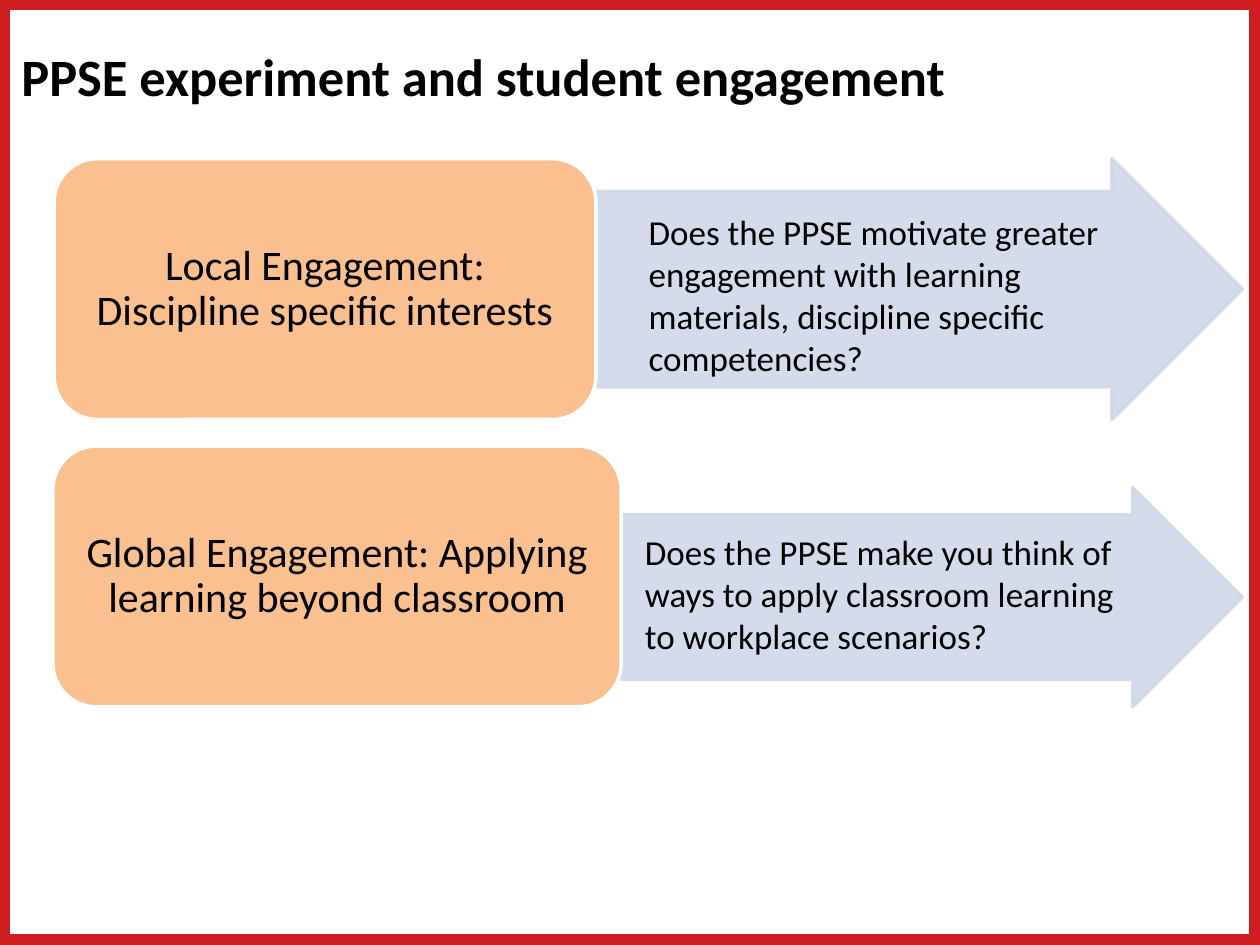
from lxml.etree import SubElement
from pptx import Presentation
from pptx.dml.color import RGBColor
from pptx.enum.shapes import MSO_SHAPE as Shape
from pptx.enum.text import MSO_ANCHOR as Anchor, PP_ALIGN as Align
from pptx.oxml.ns import qn
from pptx.util import Inches, Pt

COLORS = {"frame": "CF1C20", "arrow": "D0D8E8", "card": "FAC090",
          "outline": "FFFFFF", "text": "000000"}

prs = Presentation()
prs.slide_width, prs.slide_height = Inches(10), Inches(7.5)
COL, ROW = prs.slide_width / 100, prs.slide_height / 75
slide = prs.slides.add_slide(prs.slide_layouts[6])


def add_block(preset, area, fill, line, line_width, opacity=100):
    """Add a preset shape, or a text box if preset is None; area is in grid units."""
    left, top, width, height = area
    box = [round(v) for v in (left * COL, top * ROW, width * COL, height * ROW)]
    if preset is None:
        return slide.shapes.add_textbox(*box)
    block = slide.shapes.add_shape(preset, *box)
    block.shadow.inherit = False
    block.line.color.rgb = RGBColor.from_string(COLORS[line])
    block.line.width = Pt(line_width)
    if fill:
        block.fill.solid()
        block.fill.fore_color.rgb = RGBColor.from_string(COLORS[fill])
    else:
        block.fill.background()
    if opacity < 100:
        for color in block._element.spPr.iter(qn("a:srgbClr")):
            SubElement(color, qn("a:alpha"), val=str(opacity * 1000))
    return block


def write(block, text, size, inset=(0.1, 0.05), bold=False,
          align=Align.LEFT, anchor=Anchor.TOP, spacing=1.0):
    frame = block.text_frame
    side, end = map(Inches, inset)
    layout = {"word_wrap": True, "vertical_anchor": anchor,
              "margin_left": side, "margin_right": side,
              "margin_top": end, "margin_bottom": end}
    for name, value in layout.items():
        setattr(frame, name, value)
    paragraph = frame.paragraphs[0]
    paragraph.alignment, paragraph.line_spacing = align, spacing
    run = paragraph.add_run()
    run.text = text
    for name, value in {"name": "Calibri", "size": Pt(size), "bold": bold}.items():
        setattr(run.font, name, value)
    run.font.color.rgb = RGBColor.from_string(COLORS["text"])


add_block(Shape.RECTANGLE, (0, 0, 100, 75), None, "frame", 12)

title = add_block(None, (1.7, 3.5, 89, 11.2), None, None, 0)
write(title, "PPSE experiment and student engagement", 30, inset=(0, 0), bold=True)

ARROW_TIP = 98.6
CARD_HEIGHT = 20.7
# card left, top, width; arrow top, height; question area; card label; question
levels = [
    ((4.3, 12.6, 43), (12.6, 20.7), (50.5, 16.2, 43.3, 14.5),
     "Local Engagement: Discipline specific interests",
     "Does the PPSE motivate greater engagement with learning materials, "
     "discipline specific competencies?"),
    ((4.2, 35.4, 45.1), (38.7, 17.4), (50.2, 41.6, 39.3, 14.1),
     "Global Engagement: Applying learning beyond classroom",
     "Does the PPSE make you think of ways to apply classroom learning "
     "to workplace scenarios?"),
]
for (left, top, width), (arrow_top, arrow_height), question_area, label, question in levels:
    arrow_left = left + width
    arrow = add_block(Shape.RIGHT_ARROW,
                      (arrow_left, arrow_top, ARROW_TIP - arrow_left, arrow_height),
                      "arrow", "arrow", 2, opacity=90)
    arrow.adjustments[0], arrow.adjustments[1] = 0.75, 0.5

    card = add_block(Shape.ROUNDED_RECTANGLE, (left, top, width, CARD_HEIGHT),
                     "card", "outline", 2)
    write(card, label, 24, inset=(0.13, 0.05), align=Align.CENTER,
          anchor=Anchor.MIDDLE, spacing=0.9)

    write(add_block(None, question_area, None, None, 0), question, 20)

prs.save("out.pptx")
